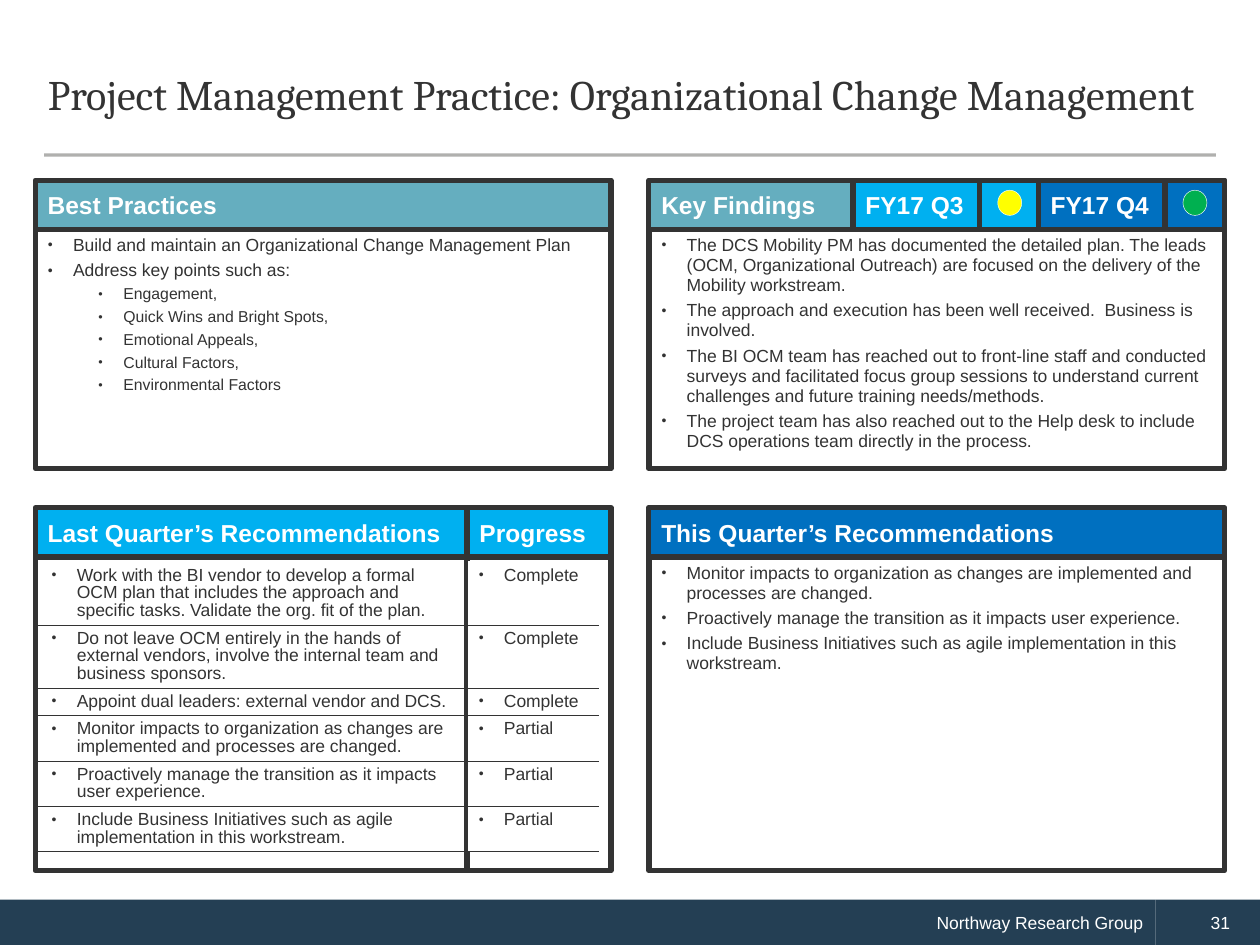
from collections import namedtuple

from lxml import etree
from pptx import Presentation
from pptx import util as u
from pptx.dml.color import RGBColor
from pptx.enum import shapes, text
from pptx.oxml import ns

Box = namedtuple("Box", "left top width height")

INK, WHITE, NAVY = "333333", "FFFFFF", "243F54"
TEAL, SKY, BLUE = "65AEBF", "00B0F0", "0070C0"
YELLOW, GREEN = "FFFF00", "00B050"
HEAD = 0.39
COLUMNS = (0.28, 5.15)
ROWS = ((1.43, 2.29), (4.03, 2.88))
PANEL_WIDTH = 4.57
INDENT = 0.2

PRACTICES = [
    ("Build and maintain an Organizational Change Management Plan", 0),
    ("Address key points such as:", 0),
    ("Engagement,", 1),
    ("Quick Wins and Bright Spots,", 1),
    ("Emotional Appeals,", 1),
    ("Cultural Factors,", 1),
    ("Environmental Factors", 1),
]
FINDINGS = [
    ("The DCS Mobility PM has documented the detailed plan. The leads (OCM, Organizational "
     "Outreach) are focused on the delivery of the Mobility workstream.", 0),
    ("The approach and execution has been well received.  Business is involved.", 0),
    ("The BI OCM team has reached out to front-line staff and conducted surveys and facilitated "
     "focus group sessions to understand current challenges and future training needs/methods.", 0),
    ("The project team has also reached out to the Help desk to include DCS operations team "
     "directly in the process.", 0),
]
CARRIED_OVER = [
    "Monitor impacts to organization as changes are implemented and processes are changed.",
    "Proactively manage the transition as it impacts user experience.",
    "Include Business Initiatives such as agile implementation in this workstream.",
]
PROGRESS = [
    ("Work with the BI vendor to develop a formal OCM plan that includes the approach and "
     "specific tasks. Validate the org. fit of the plan.", "Complete", 0.5),
    ("Do not leave OCM entirely in the hands of external vendors, involve the internal team "
     "and business sponsors.", "Complete", 0.5),
    ("Appoint dual leaders: external vendor and DCS.", "Complete", 0.22),
] + [(advice, "Partial", 0.36) for advice in CARRIED_OVER]


def colour(value):
    return RGBColor.from_string(value)


def inches(box):
    return [u.Inches(length) for length in box]


def add_xml(parent, tag, **attributes):
    return etree.SubElement(parent, ns.qn(tag), attributes)


def write(paragraph, words, size=10, color=INK, font="Arial", bold=False,
          align=text.PP_ALIGN.LEFT, spacing=None, before=0, margin=0, bullet=False):
    properties = paragraph._p.get_or_add_pPr()
    properties.set("marL", str(u.Inches(margin)))
    properties.set("indent", str(u.Inches(-INDENT if bullet else 0)))
    if bullet:
        add_xml(properties, "a:buSzPct", val="80000")
        add_xml(properties, "a:buFont", typeface="Arial")
        add_xml(properties, "a:buChar", char="•")
    paragraph.alignment = align
    paragraph.space_before = u.Pt(before)
    paragraph.space_after = u.Pt(0)
    if spacing:
        paragraph.line_spacing = spacing
    run = paragraph.add_run()
    run.text = words
    run.font.size = u.Pt(size)
    run.font.name = font
    run.font.bold = bold
    run.font.color.rgb = colour(color)


def paint(shape, fill, line=INK, weight=3):
    shape.fill.solid()
    shape.fill.fore_color.rgb = colour(fill)
    if line:
        shape.line.color.rgb = colour(line)
        shape.line.width = u.Pt(weight)
    else:
        shape.line.fill.background()


def block(slide, box, fill, words="", kind=shapes.MSO_SHAPE.RECTANGLE,
          line=INK, weight=3, **style):
    shape = slide.shapes.add_shape(kind, *inches(box))
    shape.shadow.inherit = False
    paint(shape, fill, line, weight)
    if words:
        shape.text_frame.word_wrap = True
        shape.text_frame.vertical_anchor = text.MSO_ANCHOR.MIDDLE
        write(shape.text_frame.paragraphs[0], words, color=WHITE, **style)


def header(slide, box, words, fill):
    block(slide, box, fill, words, size=14, bold=True)


def title(slide, box, words):
    heading = slide.shapes.title
    heading.left, heading.top, heading.width, heading.height = inches(box)
    frame = heading.text_frame
    frame.auto_size = text.MSO_AUTO_SIZE.NONE
    frame.vertical_anchor = text.MSO_ANCHOR.MIDDLE
    write(frame.paragraphs[0], words, size=24, font="Cambria", spacing=u.Pt(26))
    rule = slide.shapes.add_connector(
        shapes.MSO_CONNECTOR.STRAIGHT, *inches((0.35, 1.23, 9.65, 1.23)))
    rule.line.color.rgb = colour("45433E")
    rule.line.width = u.Pt(1.75)
    tint = rule.line._ln.find(".//" + ns.qn("a:srgbClr"))
    add_xml(tint, "a:alpha", val="42000")
    add_xml(rule._element.spPr, "a:effectLst")


def list_panel(slide, box, holder, heading, fill, points):
    body = slide.placeholders[holder]
    body.left, body.top, body.width, body.height = inches(
        (box.left, box.top + HEAD, box.width, box.height - HEAD))
    paint(body, WHITE)
    frame = body.text_frame
    frame.auto_size = text.MSO_AUTO_SIZE.NONE
    frame.vertical_anchor = text.MSO_ANCHOR.TOP
    for index, (words, level) in enumerate(points):
        paragraph = frame.add_paragraph() if index else frame.paragraphs[0]
        paragraph.level = level
        size = 10 - level
        write(paragraph, words, size=size, spacing=0.95, before=0.3 * size if index else 0,
              margin=INDENT + 0.4 * level, bullet=True)
    header(slide, box._replace(height=HEAD), heading, fill)


def quarter_status(slide, box, quarter, fill, light):
    label = box.width * 0.68
    header(slide, box._replace(width=label), quarter, fill)
    lamp = box._replace(left=box.left + label, width=box.width - label)
    block(slide, lamp, fill)
    block(slide, Box(lamp.left + lamp.width * 0.3, lamp.top + 0.08, 0.19, 0.2), light,
          kind=shapes.MSO_SHAPE.OVAL, line=WHITE, weight=0.25)


def border(cell, side, color, weight):
    edge = add_xml(cell._tc.get_or_add_tcPr(), "a:ln" + side, w=str(u.Pt(weight)))
    add_xml(add_xml(edge, "a:solidFill"), "a:srgbClr", val=color)


def progress_panel(slide, box, fill):
    split = box.width * 0.75
    columns = ((box.left, split, "Last Quarter’s Recommendations"),
               (box.left + split, box.width - split, "Progress"))
    for left, width, heading in columns:
        block(slide, Box(left, box.top + HEAD, width, box.height - HEAD), WHITE)
        header(slide, Box(left, box.top, width, HEAD), heading, fill)

    grid = slide.shapes.add_table(len(PROGRESS), 2, *inches(
        (box.left + 0.03, box.top + HEAD + 0.04, 4.44, 2.3))).table
    grid.first_row = grid.horz_banding = False
    for column, width in zip(grid.columns, (3.39, 1.05)):
        column.width = u.Inches(width)
    thin, thick, blank = (INK, 0.25), (INK, 3), (WHITE, 1)
    for row, (advice, status, height) in enumerate(PROGRESS):
        grid.rows[row].height = u.Inches(height)
        for column, words in enumerate((advice, status)):
            cell = grid.cell(row, column)
            cell.margin_top = cell.margin_bottom = u.Inches(0.04)
            write(cell.text_frame.paragraphs[0], words, spacing=0.9,
                  margin=INDENT, bullet=True)
            border(cell, "L", *(thick if column else blank))
            border(cell, "R", *(blank if column else thick))
            border(cell, "T", *(thin if row else blank))
            border(cell, "B", *thin)
            cell.fill.solid()
            cell.fill.fore_color.rgb = colour(WHITE)


def footer(slide, box, owner, number):
    split = box.width * 0.917
    block(slide, box._replace(width=split), NAVY, owner, line=None,
          align=text.PP_ALIGN.RIGHT, margin=0.29)
    block(slide, box._replace(left=split, width=box.width - split), NAVY, number,
          line=None, align=text.PP_ALIGN.CENTER, margin=0.2)


def main():
    deck = Presentation()
    deck.slide_width, deck.slide_height = u.Inches(10), u.Inches(7.5)
    slide = deck.slides.add_slide(deck.slide_layouts.get_by_name("Comparison"))
    spare = slide.placeholders[3]._element
    spare.getparent().remove(spare)
    best, findings, last, current = [
        Box(left, top, PANEL_WIDTH, height) for top, height in ROWS for left in COLUMNS]

    footer(slide, Box(0, 7.14, 10, 0.36), "Northway Research Group", "31")
    title(slide, Box(0.28, 0.29, 9.43, 0.94),
          "Project Management Practice: Organizational Change Management")
    list_panel(slide, best, 1, "Best Practices", TEAL, PRACTICES)
    list_panel(slide, findings, 2, "Key Findings", TEAL, FINDINGS)
    for left, quarter, fill, light in ((6.77, "FY17 Q3", SKY, YELLOW),
                                       (8.24, "FY17 Q4", BLUE, GREEN)):
        quarter_status(slide, Box(left, findings.top, 1.48, HEAD), quarter, fill, light)
    progress_panel(slide, last, SKY)
    list_panel(slide, current, 4, "This Quarter’s Recommendations", BLUE,
               [(advice, 0) for advice in CARRIED_OVER])
    deck.save("out.pptx")


if __name__ == "__main__":
    main()
